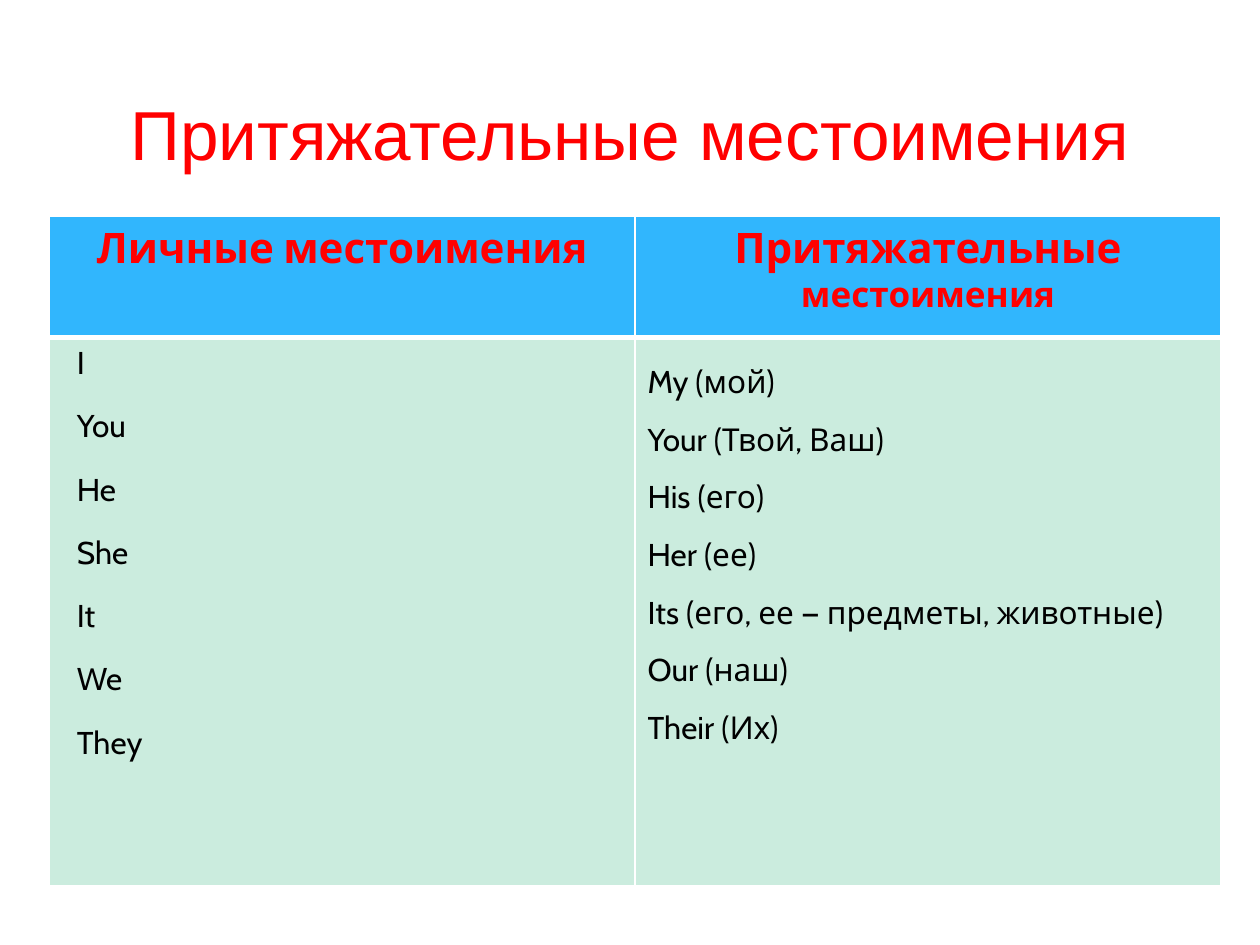
"""Build a slide that pairs English personal and possessive pronouns in a table."""
from lxml import etree
from pptx import Presentation
from pptx.dml.color import RGBColor
from pptx.enum import text
from pptx.oxml.ns import qn
from pptx.util import Inches, Pt

RED = RGBColor(0xFF, 0x00, 0x00)
BLACK = RGBColor(0x00, 0x00, 0x00)
BLUE = RGBColor(0x31, 0xB6, 0xFD)
MINT = RGBColor(0xCB, 0xEC, 0xDE)
WHITE = RGBColor(0xFF, 0xFF, 0xFF)

PERSONAL = ["I", "You", "He", "She", "It", "We", "They"]
POSSESSIVE = ["My (мой)", "Your (Твой, Ваш)", "His (его)", "Her (ее)",
              "Its (его, ее — предметы, животные)", "Our (наш)", "Their (Их)"]


def add_run(p, words, size, color, name="Cabin", bold=False):
    r = p.add_run()
    r.text = words
    r.font.size = Pt(size)
    r.font.name = name
    r.font.bold = bold
    r.font.color.rgb = color


def set_title(s, words):
    sp = s.shapes.title
    sp.left, sp.top, sp.width, sp.height = map(Inches, (0.5, 0.37, 9, 1.37))
    tf = sp.text_frame
    tf.auto_size = text.MSO_AUTO_SIZE.NONE
    tf.vertical_anchor = text.MSO_ANCHOR.MIDDLE
    p = tf.paragraphs[0]
    p.alignment = text.PP_ALIGN.CENTER
    add_run(p, words, 39.6, RED, "Arial")


def style_cell(cell, fill, top, bottom):
    cell.fill.solid()
    cell.fill.fore_color.rgb = fill
    tc_pr = cell._tc.get_or_add_tcPr()
    sides = (("lnL", 1), ("lnR", 1), ("lnT", top), ("lnB", bottom))
    for i, (side, width) in enumerate(sides):
        ln = etree.Element(qn(f"a:{side}"), w=str(Pt(width)))
        solid = etree.SubElement(ln, qn("a:solidFill"))
        etree.SubElement(solid, qn("a:srgbClr"), val=str(WHITE))
        tc_pr.insert(i, ln)


def fill_header(cell, parts):
    style_cell(cell, BLUE, 1, 3)
    p = cell.text_frame.paragraphs[0]
    p.alignment = text.PP_ALIGN.CENTER
    for words, size in parts:
        add_run(p, words, size, RED, bold=True)


def fill_list(cell, lines, format_paragraph):
    style_cell(cell, MINT, 3, 1)
    tf = cell.text_frame
    for i, line in enumerate(lines):
        p = tf.add_paragraph() if i else tf.paragraphs[0]
        format_paragraph(p)
        add_run(p, line, 18, BLACK)


def hang_paragraph(p):
    p.space_before = Pt(14.2)
    p_pr = p._p.get_or_add_pPr()
    p_pr.set("marL", str(Inches(0.47)))
    p_pr.set("indent", str(Inches(-0.35)))


def space_lines(p):
    p.line_spacing = 1.5


def add_pronoun_table(s):
    frame = s.shapes.add_table(2, 2, Inches(0.39), Inches(1.72), Inches(9.3), Inches(5.31))
    table = frame.table
    for row, height in zip(table.rows, (0.96, 4.35)):
        row.height = Inches(height)
    fill_header(table.cell(0, 0), [("Личные местоимения", 24)])
    fill_header(table.cell(0, 1), [("Притяжательные", 24), (" местоимения", 20)])
    fill_list(table.cell(1, 0), PERSONAL, hang_paragraph)
    fill_list(table.cell(1, 1), POSSESSIVE, space_lines)


def main():
    prs = Presentation()
    prs.slide_width, prs.slide_height = Inches(10), Inches(7.5)
    s = prs.slides.add_slide(prs.slide_layouts[5])
    set_title(s, "Притяжательные местоимения")
    add_pronoun_table(s)
    prs.save("out.pptx")


if __name__ == "__main__":
    main()
